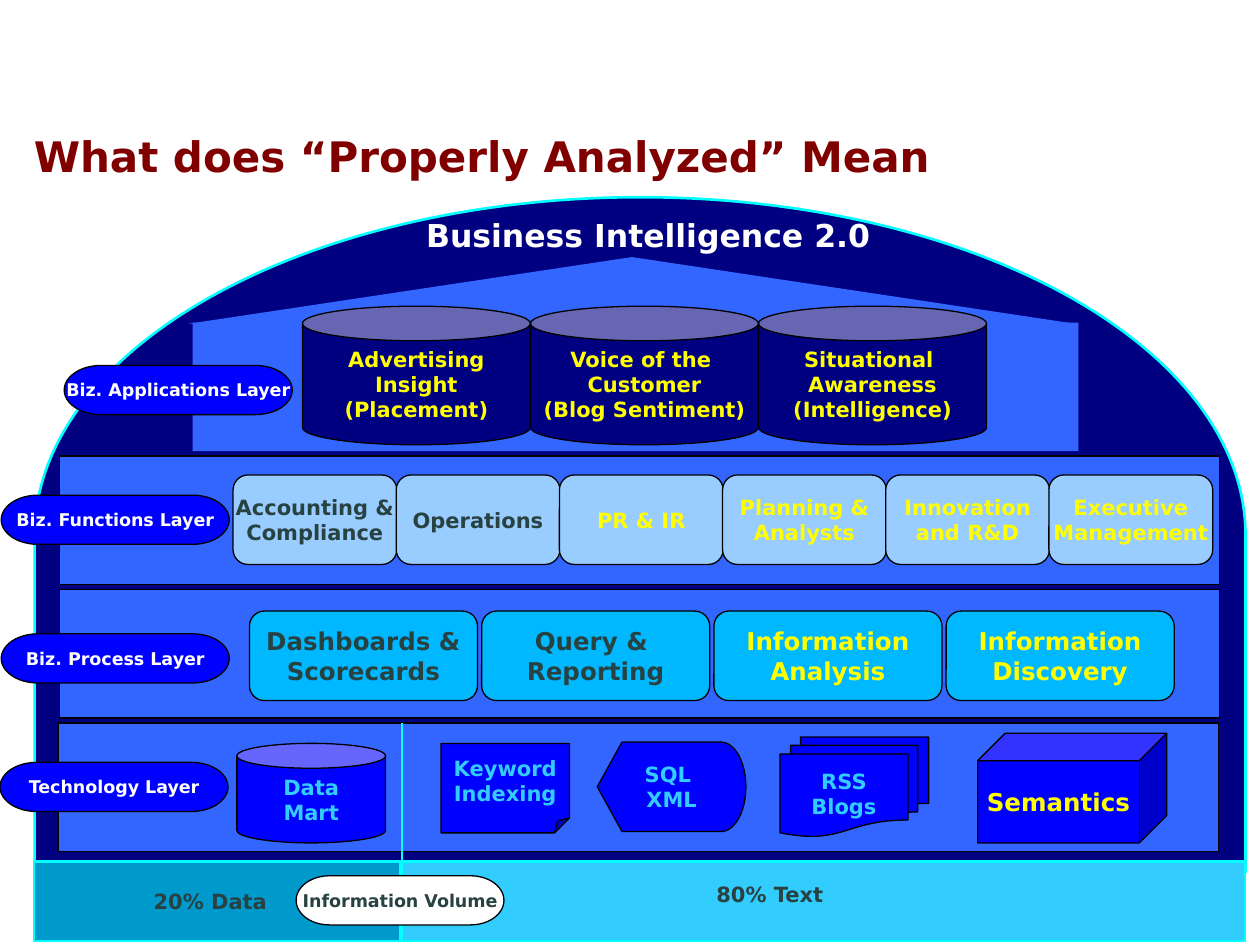
import lxml.etree
import pptx
import pptx.dml.color
import pptx.enum.shapes
import pptx.enum.text
import pptx.oxml.ns
import pptx.util

RGBColor = pptx.dml.color.RGBColor
MSO = pptx.enum.shapes.MSO_SHAPE
ANCHOR = pptx.enum.text.MSO_ANCHOR
ALIGN = pptx.enum.text.PP_ALIGN

WIDTH = pptx.util.Inches(10)
HEIGHT = pptx.util.Inches(7.5)
FONT = "DejaVu Sans"

MAROON = RGBColor(0x80, 0x00, 0x00)
NAVY = RGBColor(0x00, 0x00, 0x80)
BLUE = RGBColor(0x00, 0x00, 0xFF)
ROYAL = RGBColor(0x33, 0x66, 0xFF)
TEAL = RGBColor(0x00, 0x99, 0xCC)
SKY = RGBColor(0x33, 0xCC, 0xFF)
AZURE = RGBColor(0x00, 0xB8, 0xFF)
PALE = RGBColor(0x99, 0xCC, 0xFF)
CYAN = RGBColor(0x00, 0xFF, 0xFF)
YELLOW = RGBColor(0xFF, 0xFF, 0x00)
SLATE = RGBColor(0x28, 0x41, 0x41)
WHITE = RGBColor(0xFF, 0xFF, 0xFF)
BLACK = RGBColor(0x00, 0x00, 0x00)

PILL_H = 5.2
BOX_H = 9.47
UNIT_W = 18.1
DIVIDER_X = 31.9


def across(share):
    return round(WIDTH * share / 100)


def down(share):
    return round(HEIGHT * share / 100)


def place(x, y, w, h):
    return across(x), down(y), across(w), down(h)


def write(sp, text, size, color, align=ALIGN.CENTER, anchor=ANCHOR.MIDDLE, wrap=False):
    tf = sp.text_frame
    tf.text = text
    for name, value in {"word_wrap": wrap, "vertical_anchor": anchor}.items():
        setattr(tf, name, value)
    fmt = {"name": FONT, "size": pptx.util.Pt(size), "bold": True}
    for p in tf.paragraphs:
        p.alignment = align
        for r in p.runs:
            for name, value in fmt.items():
                setattr(r.font, name, value)
            r.font.color.rgb = color


def add_block(s, kind, box, fill, line=None, weight=0.75):
    sp = s.shapes.add_shape(kind, *place(*box))
    sp.shadow.inherit = False
    sp.fill.solid()
    sp.fill.fore_color.rgb = fill
    if line is None:
        sp.line.fill.background()
    else:
        sp.line.color.rgb = line
        sp.line.width = pptx.util.Pt(weight)
    return sp


def add_label(s, kind, box, fill, text, size, color, line=BLACK, anchor=ANCHOR.MIDDLE):
    sp = add_block(s, kind, box, fill, line)
    write(sp, text, size, color, anchor=anchor)


def add_row(s, kind, box, step, fill, size, items):
    x, y, w, h = box
    for i, (text, color) in enumerate(items):
        add_label(s, kind, (x + i * step, y, w, h), fill, text, size, color)


def add_divider(s, x, top, bottom):
    line = s.shapes.add_connector(
        pptx.enum.shapes.MSO_CONNECTOR.STRAIGHT,
        across(x), down(bottom), across(x), down(top))
    line.line.color.rgb = CYAN
    line.line.width = pptx.util.Pt(1.5)
    lxml.etree.SubElement(line._element.spPr, pptx.oxml.ns.qn("a:effectLst"))


def add_title(s, text):
    sp = s.shapes.add_textbox(*place(1.7, 11.47, 98.3, 10))
    write(sp, text, 24, MAROON, align=ALIGN.LEFT, wrap=True)


def add_foundation(s):
    dome = add_block(s, MSO.FLOWCHART_DELAY, (24, -7.47, 53.6, 128.13), NAVY, CYAN, 1.5)
    dome.rotation = 270
    for x, w, fill in ((2.7, 29.1, TEAL), (DIVIDER_X, 66.9, SKY)):
        add_block(s, MSO.RECTANGLE, (x, 91.2, w, 8.4), fill, CYAN, 1.5)
    add_label(s, MSO.FLOWCHART_TERMINATOR, (23.5, 92.67, 16.5, PILL_H), WHITE,
              "Information Volume", 10, SLATE)
    for box, fill, text in (((11, 93.33, 11.4, 4), TEAL, "20% Data"),
                            ((55.5, 92.67, 11.2, 4), SKY, "80% Text")):
        add_label(s, MSO.RECTANGLE, box, fill, text, 12, SLATE, None, ANCHOR.TOP)
    add_label(s, MSO.FLOWCHART_TERMINATOR, (42.4, 22.27, UNIT_W, PILL_H), NAVY,
              "Business Intelligence 2.0", 18, WHITE, None)


def add_layers(s):
    layers = (
        (15.3, 70.3, None, 5.1, 38.67, "Biz. Applications Layer"),
        (4.7, 92.1, BLACK, 0.1, 52.4, "Biz. Functions Layer"),
        (4.7, 92.1, BLACK, 0.1, 67.07, "Biz. Process Layer"),
        (4.6, 92.1, BLACK, 0, 80.67, "Technology Layer"),
    )
    for i, (x, w, line, pill_x, pill_y, text) in enumerate(layers):
        add_block(s, MSO.RECTANGLE, (x, 34.13 + i * 14.13, w, 13.6), ROYAL, line)
        add_label(s, MSO.FLOWCHART_TERMINATOR, (pill_x, pill_y, UNIT_W, PILL_H),
                  BLUE, text, 10, WHITE)
    add_block(s, MSO.ISOSCELES_TRIANGLE, (14.9, 27.2, 70.5, 7.07), ROYAL)


def add_technology(s):
    tools = (
        (MSO.CAN, (18.8, 78.67, 11.8, 10.53), "Data\nMart", 12, SKY),
        (MSO.FLOWCHART_DISPLAY, (47.4, 78.53, 11.8, BOX_H), "SQL \nXML", 12, SKY),
        (MSO.FLOWCHART_MULTIDOCUMENT, (61.9, 78, 11.8, 10.53), "RSS\nBlogs", 12, SKY),
        (MSO.FOLDED_CORNER, (35, 78.67, 10.2, BOX_H), "Keyword\nIndexing", 12, SKY),
        (MSO.CUBE, (77.6, 77.6, 15, 11.6), "Semantics", 14, YELLOW),
    )
    for kind, box, text, size, color in tools:
        add_label(s, kind, box, BLUE, text, size, color)
    add_divider(s, DIVIDER_X, 76.53, 92.27)


def main():
    prs = pptx.Presentation()
    prs.slide_width, prs.slide_height = WIDTH, HEIGHT
    s = prs.slides.add_slide(prs.slide_layouts[6])
    add_title(s, "What does “Properly Analyzed” Mean")
    add_foundation(s)
    add_layers(s)
    add_row(s, MSO.ROUNDED_RECTANGLE, (19.8, 64.67, UNIT_W, BOX_H), 18.43, AZURE, 14, (
        ("Dashboards &\nScorecards", SLATE),
        ("Query & \nReporting", SLATE),
        ("Information\nAnalysis", YELLOW),
        ("Information\nDiscovery", YELLOW),
    ))
    add_row(s, MSO.ROUNDED_RECTANGLE, (18.5, 50.27, 13, BOX_H), 12.95, PALE, 12, (
        ("Accounting &\nCompliance", SLATE),
        ("Operations", SLATE),
        ("PR & IR", YELLOW),
        ("Planning &\nAnalysts", YELLOW),
        ("Innovation\nand R&D", YELLOW),
        ("Executive\nManagement", YELLOW),
    ))
    add_technology(s)
    add_row(s, MSO.CAN, (24, 32.4, UNIT_W, 14.67), UNIT_W, NAVY, 12, (
        ("Advertising\nInsight\n(Placement)", YELLOW),
        ("Voice of the \nCustomer\n(Blog Sentiment)", YELLOW),
        ("Situational \nAwareness\n(Intelligence)", YELLOW),
    ))
    prs.save("out.pptx")


if __name__ == "__main__":
    main()
